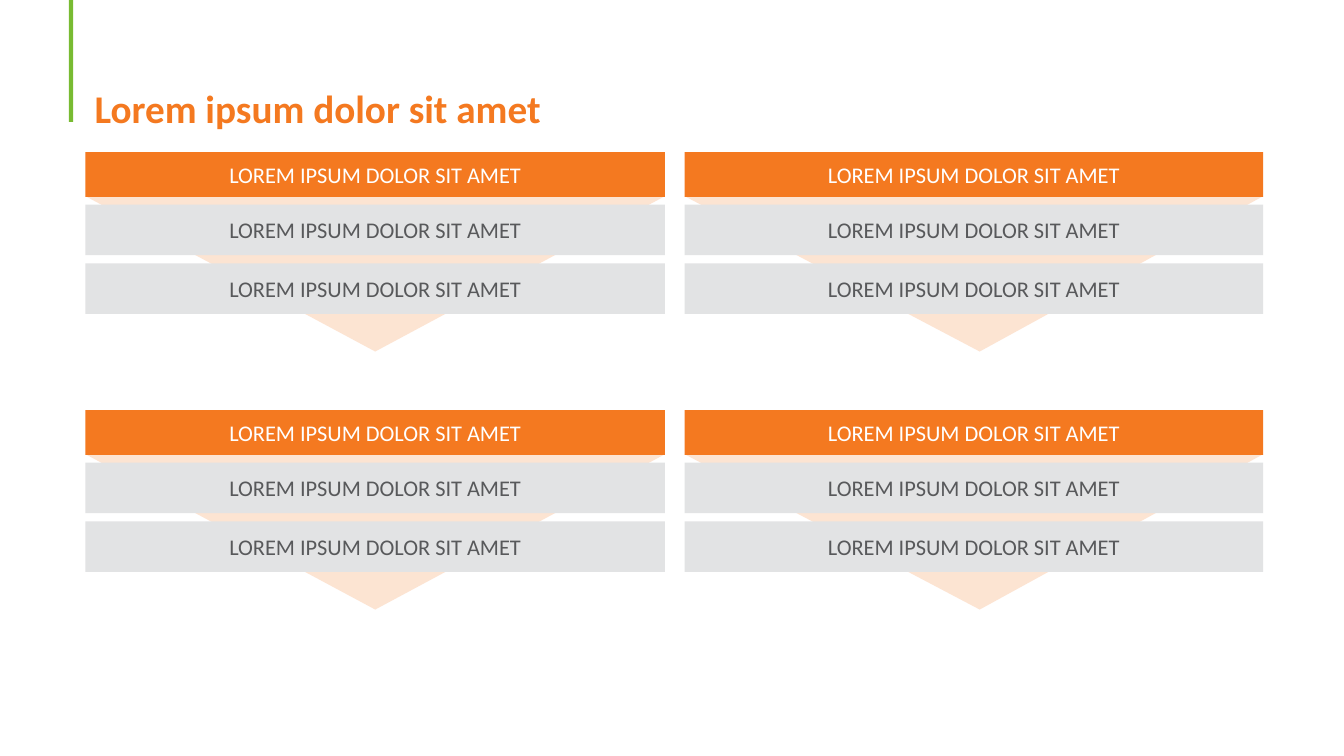
from pptx import Presentation
from pptx import util as u
from pptx.dml.color import RGBColor
from pptx.enum import shapes, text
from pptx.oxml.ns import qn
from lxml import etree

HUES = {"green": "78BB32", "orange": "F47920", "grey": "E2E3E4",
        "ink": "58595B", "white": "FFFFFF"}
LABEL = "LOREM IPSUM DOLOR SIT AMET"


class Deck:
    font = "Calibri"

    def __init__(self):
        self.prs = Presentation()
        self.prs.slide_width, self.prs.slide_height = u.Pt(960), u.Pt(540)
        self.slide = self.prs.slides.add_slide(self.prs.slide_layouts[6])

    def hue(self, name):
        return RGBColor.from_string(HUES[name])

    def shape(self, kind, box, fill):
        item = self.slide.shapes.add_shape(kind, *map(u.Pt, box))
        item.shadow.inherit = False
        item.fill.solid()
        item.fill.fore_color.rgb = self.hue(fill)
        item.line.fill.background()
        return item

    def label(self, frame, words, size, ink, bold=False):
        frame.text = words
        font = frame.paragraphs[0].runs[0].font
        font.name, font.size, font.bold = self.font, u.Pt(size), bold
        font.color.rgb = self.hue(ink)

    def title(self, box, words):
        frame = self.slide.shapes.add_textbox(*map(u.Pt, box)).text_frame
        frame.word_wrap = True
        frame.vertical_anchor = text.MSO_ANCHOR.BOTTOM
        self.label(frame, words, 28, "orange", True)

    def bar(self, box, fill):
        return self.shape(shapes.MSO_SHAPE.RECTANGLE, box, fill)

    def band(self, box, fill, ink, wrap):
        frame = self.bar(box, fill).text_frame
        frame.word_wrap = wrap
        frame.margin_top = frame.margin_bottom = 0
        frame.vertical_anchor = text.MSO_ANCHOR.MIDDLE
        self.label(frame, LABEL, 16, ink)
        frame.paragraphs[0].alignment = text.PP_ALIGN.CENTER

    def arrow(self, box, tip):
        item = self.shape(shapes.MSO_SHAPE.ISOSCELES_TRIANGLE, box, "orange")
        item.rotation = 180
        item.adjustments[0] = tip
        # 20 percent opacity
        tone = item.element.spPr.find(qn("a:solidFill"))[0]
        etree.SubElement(tone, qn("a:alpha")).set("val", "20000")

    def block(self, left, top, wide, tip):
        self.arrow((left, top + 31.5, wide, 111), tip)
        self.band((left, top, wide, 32), "orange", "white", False)
        for row in range(2):
            self.band((left, top + 37.6 + 42 * row, wide, 36),
                      "grey", "ink", True)


def main():
    deck = Deck()

    # Accent and heading
    deck.bar((49.2, 0, 3, 87.2), "green")
    deck.title((60.5, 29.5, 862.5, 67.7), "Lorem ipsum dolor sit amet")

    # Two by two blocks
    for top in (108.6, 292.9):
        for left, wide, tip in ((61, 414, 0.5), (489, 413.3, 0.49)):
            deck.block(left, top, wide, tip)

    deck.prs.save("out.pptx")


if __name__ == "__main__":
    main()
